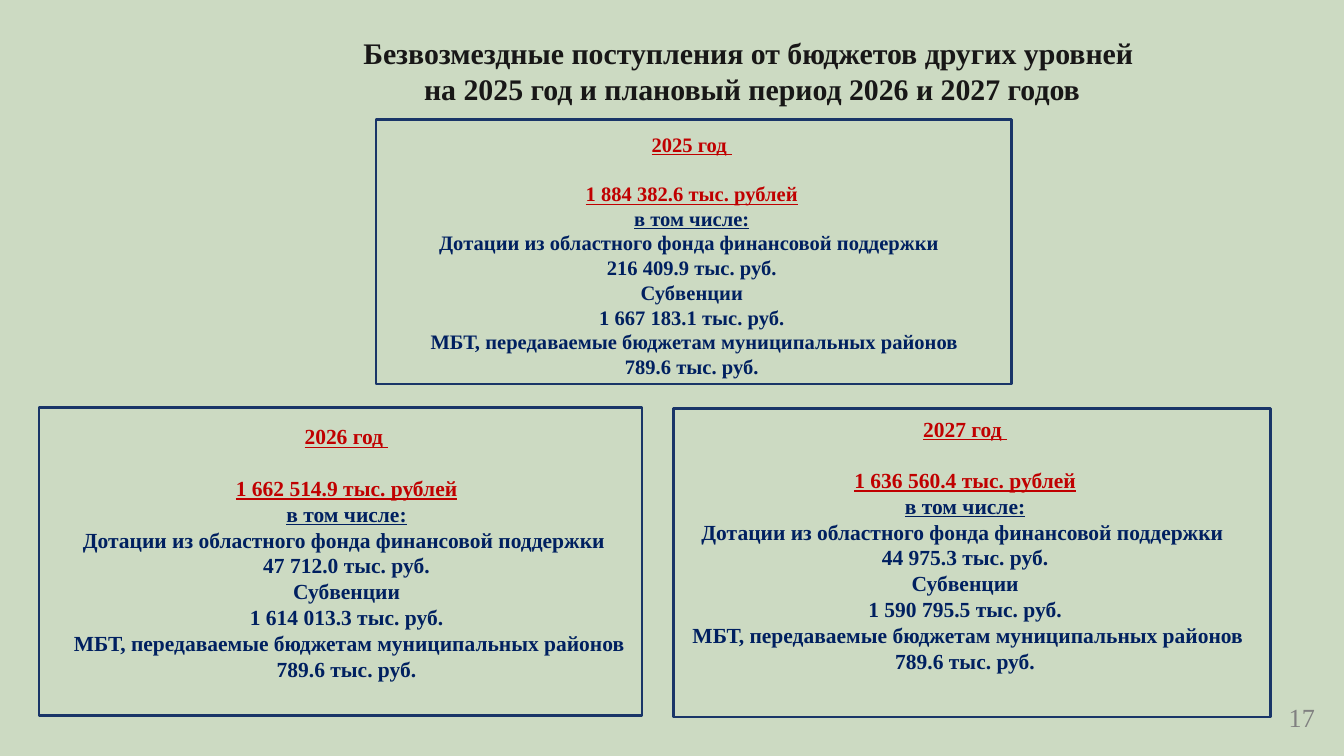
from pptx import Presentation
from pptx.dml.color import RGBColor
from pptx.enum.shapes import MSO_SHAPE
from pptx.enum.text import MSO_ANCHOR, MSO_AUTO_SIZE, PP_ALIGN
from pptx.util import Cm, Pt

FONT = "Times New Roman"
RED, NAVY = "C00000", "002060"

# Frame box, text box offset and size relative to the frame (cm), text size,
# year, total, grants, subventions
YEARS = [
    ((7.11, 2.26, 12.01, 5.0), (-0.84, 0.13, 13.61, 5.0), 11,
     "2025", "1 884 382.6", "216 409.9", "1 667 183.1"),
    ((0.74, 7.7, 11.4, 5.82), (0.07, 0.2, 11.48, 5.2), 11.5,
     "2026", "1 662 514.9", "47 712.0", "1 614 013.3"),
    ((12.73, 7.72, 11.28, 5.82), (-0.23, 0.03, 11.48, 5.2), 11.5,
     "2027", "1 636 560.4", "44 975.3", "1 590 795.5"),
]


def color(hex_value):
    return RGBColor.from_string(hex_value)


def set_insets(frame):
    frame.margin_left = frame.margin_right = Cm(0.18)
    frame.margin_top = frame.margin_bottom = Cm(0.1)


def format_paragraph(paragraph, size, hex_value, bold=True, underline=False,
                     alignment=PP_ALIGN.CENTER):
    paragraph.alignment = alignment
    paragraph.line_spacing = Pt(round(size * 1.2, 1))
    paragraph.space_before = paragraph.space_after = Pt(0)
    for run in paragraph.runs:
        font = run.font
        font.name, font.size = FONT, Pt(size)
        font.bold, font.underline = bold, underline
        font.color.rgb = color(hex_value)


def add_title(slide, box):
    title = slide.shapes.title
    title.left, title.top, title.width, title.height = map(Cm, box)
    frame = title.text_frame
    frame.text = ("Безвозмездные поступления от бюджетов других уровней \n"
                  "на 2025 год и плановый период 2026 и 2027 годов")
    frame.word_wrap = True
    frame.auto_size = MSO_AUTO_SIZE.NONE
    frame.vertical_anchor = MSO_ANCHOR.MIDDLE
    set_insets(frame)
    for paragraph in frame.paragraphs:
        format_paragraph(paragraph, 16, "181717")


def add_year(slide, box, text_box, size, year, total, grants, subventions):
    # Outline
    outline = slide.shapes.add_shape(MSO_SHAPE.RECTANGLE, *map(Cm, box))
    outline.shadow.inherit = False
    outline.fill.background()
    outline.line.color.rgb = color("193568")
    outline.line.width = Pt(1.25)

    # Text
    left, top, width, height = text_box
    label = slide.shapes.add_textbox(
        Cm(box[0] + left), Cm(box[1] + top), Cm(width), Cm(height))
    frame = label.text_frame
    frame.text = "\n".join([
        f"{year} год ",
        f"{total} тыс. рублей",
        "в том числе:",
        "Дотации из областного фонда финансовой поддержки ",
        f"{grants} тыс. руб.",
        "Субвенции",
        f"{subventions} тыс. руб.",
        " МБТ, передаваемые бюджетам муниципальных районов",
        "789.6 тыс. руб.",
    ])
    frame.word_wrap = True
    frame.auto_size = MSO_AUTO_SIZE.SHAPE_TO_FIT_TEXT
    set_insets(frame)
    for index, paragraph in enumerate(frame.paragraphs):
        format_paragraph(paragraph, size, RED if index < 2 else NAVY,
                         underline=index < 3)
    # One line of air between the year and its total
    frame.paragraphs[1].space_before = Pt(round(size * 1.2, 1))


def add_page_number(slide, box, number):
    label = slide.shapes.add_textbox(*map(Cm, box))
    frame = label.text_frame
    frame.text = number
    frame.word_wrap = True
    frame.vertical_anchor = MSO_ANCHOR.MIDDLE
    format_paragraph(frame.paragraphs[0], 14, "808080", bold=False,
                     alignment=PP_ALIGN.RIGHT)


def main():
    presentation = Presentation()
    presentation.slide_width, presentation.slide_height = Cm(25.4), Cm(14.28)
    slide = presentation.slides.add_slide(presentation.slide_layouts[5])
    background = slide.background.fill
    background.solid()
    background.fore_color.rgb = color("CCDAC2")

    add_title(slide, (5.11, 0.51, 18.21, 1.63))
    for year in YEARS:
        add_year(slide, *year)
    add_page_number(slide, (23.98, 13.13, 1.12, 0.84), "17")
    presentation.save("out.pptx")


if __name__ == "__main__":
    main()
